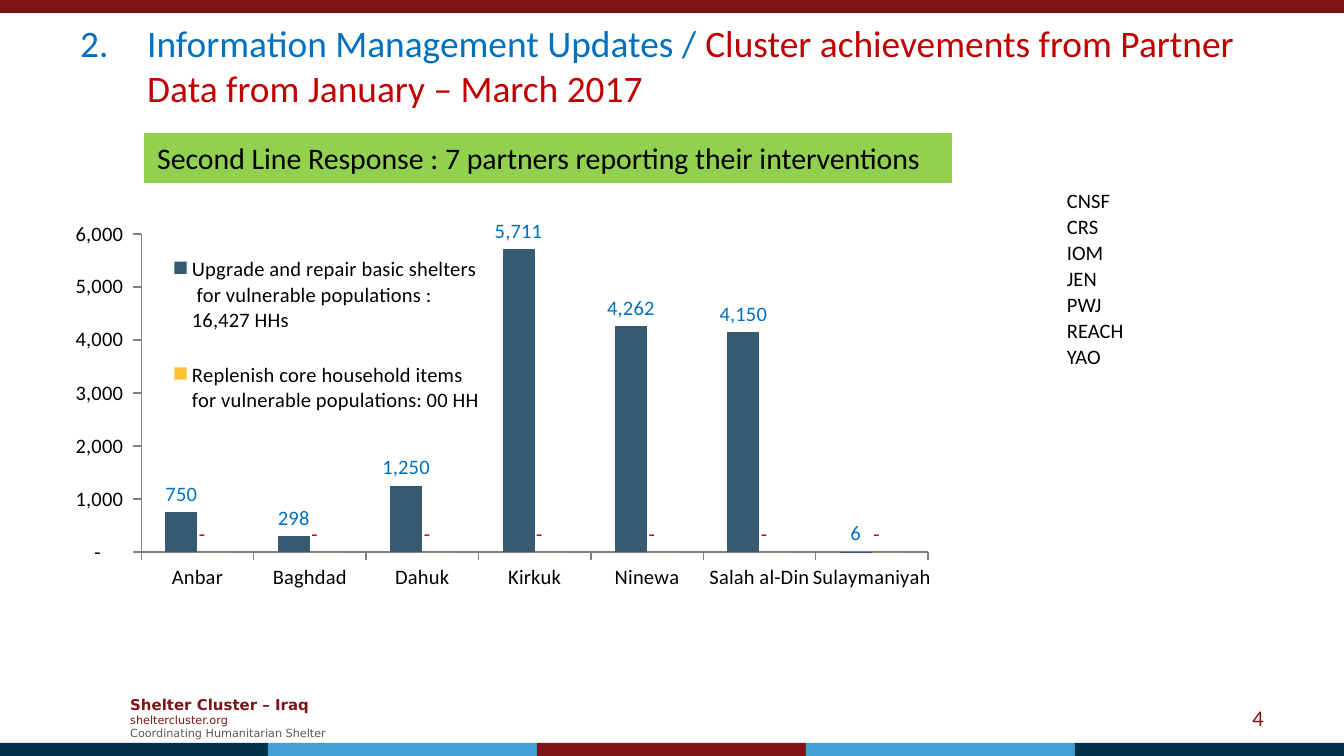
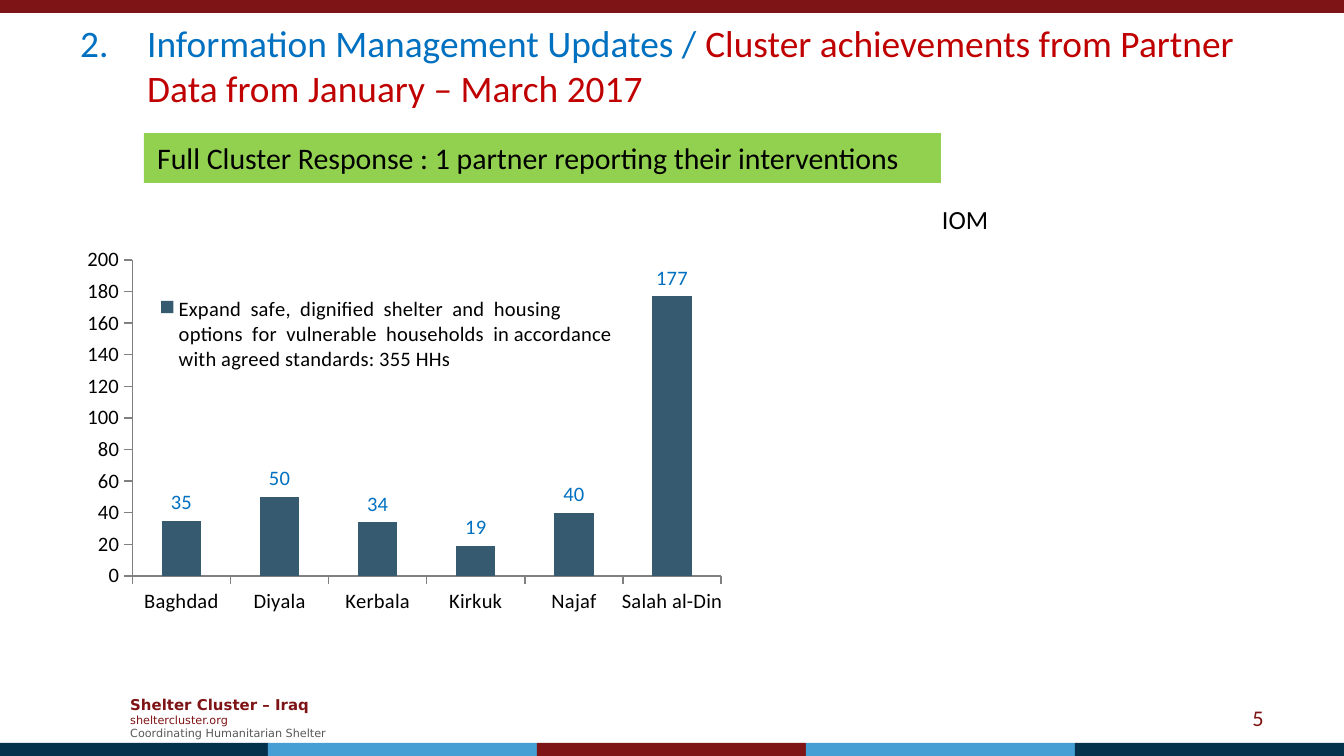
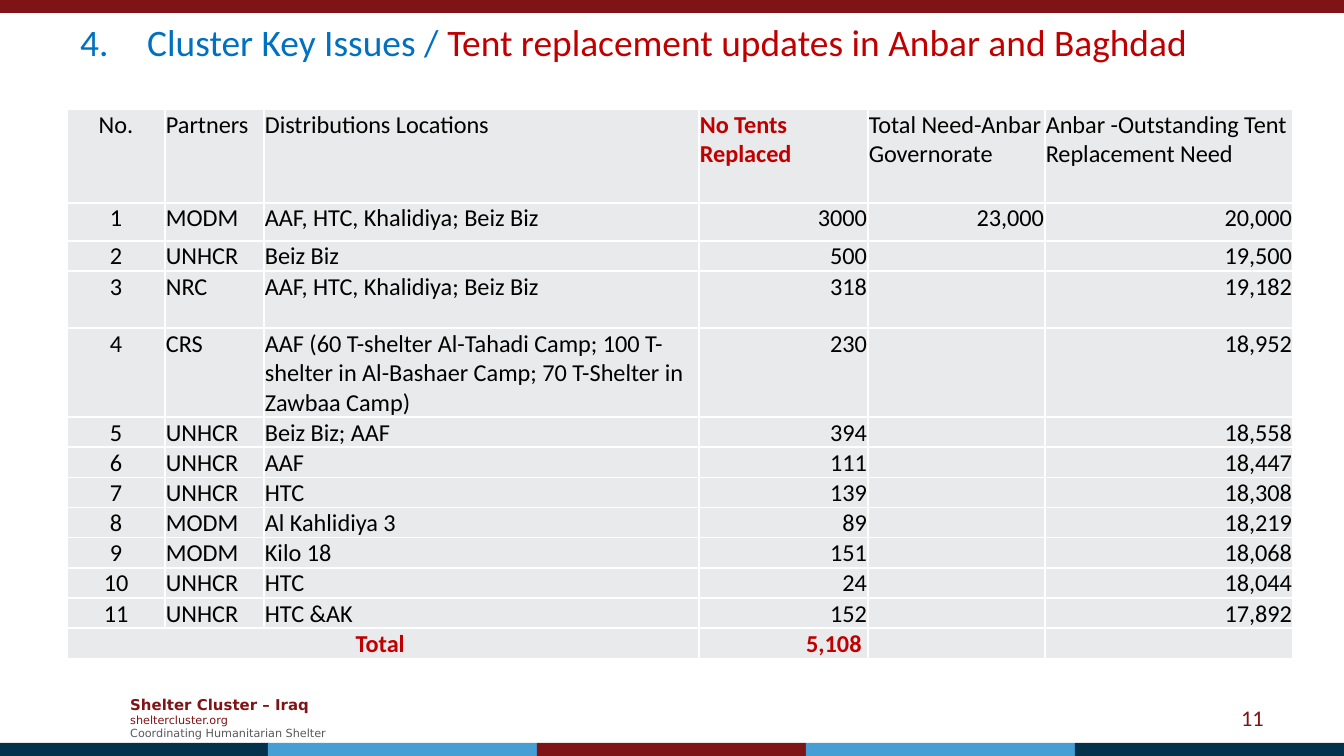
from lxml import etree
from pptx import Presentation
from pptx.chart.data import CategoryChartData
from pptx.dml.color import RGBColor
from pptx.enum.chart import XL_CHART_TYPE, XL_LABEL_POSITION, XL_LEGEND_POSITION, XL_TICK_MARK
from pptx.enum.shapes import MSO_SHAPE
from pptx.enum.text import MSO_ANCHOR, MSO_AUTO_SIZE, PP_ALIGN
from pptx.oxml.ns import qn
from pptx.util import Emu, Pt

SCALE = 914400 / 134.4
WIDTH, HEIGHT = 1344, 756
BAND = 13
FONT, FOOTER_FONT = "Calibri", "DejaVu Sans"
COLORS = {
    "maroon": "7F1416", "navy": "04314C", "sky": "459FD5", "gray": "595959",
    "blue": "0070C0", "red": "C00000", "green": "92D050", "black": "000000",
    "white": "FFFFFF", "cell": "E8EAEB", "slate": "365A70", "amber": "FFC133",
    "axis": "808080",
}
LEFT, CENTER, RIGHT = PP_ALIGN.LEFT, PP_ALIGN.CENTER, PP_ALIGN.RIGHT
TOP, MIDDLE, BOTTOM = MSO_ANCHOR.TOP, MSO_ANCHOR.MIDDLE, MSO_ANCHOR.BOTTOM
RECTANGLE = MSO_SHAPE.RECTANGLE
COLUMNS = XL_CHART_TYPE.COLUMN_CLUSTERED
OUTSIDE_END = XL_LABEL_POSITION.OUTSIDE_END
LEGEND_RIGHT = XL_LEGEND_POSITION.RIGHT
TICK_OUT, TICK_NONE = XL_TICK_MARK.OUTSIDE, XL_TICK_MARK.NONE
FIT_SHAPE = MSO_AUTO_SIZE.SHAPE_TO_FIT_TEXT

ACCOUNTING = '_(* #,##0_);_(* \\(#,##0\\);_(* "-"??_);_('
UPDATES = ("Information Management Updates / ",
           "Cluster achievements from Partner Data from January – March 2017")
PARTNERS = ["CNSF", "CRS", "IOM", "JEN", "PWJ", "REACH", "YAO"]
TENT_WIDTHS = [98, 99, 435, 169, 177, 248]
TENT_HEIGHTS = [94, 38, 30, 57, 89] + [30] * 8
TENT_HEADER = ("No.", "Partners", "Distributions Locations", "No Tents Replaced",
               "Total Need-Anbar Governorate", "Anbar -Outstanding Tent Replacement Need")
TENT_ROWS = [
    ("1", "MODM", "AAF, HTC, Khalidiya; Beiz Biz", "3000", "23,000", "20,000"),
    ("2", "UNHCR", "Beiz Biz", "500", "", "19,500"),
    ("3", "NRC", "AAF, HTC, Khalidiya; Beiz Biz", "318", "", "19,182"),
    ("4", "CRS", "AAF (60 T-shelter Al-Tahadi Camp; 100 T-shelter in Al-Bashaer Camp; "
     "70 T-Shelter in Zawbaa Camp)", "230", "", "18,952"),
    ("5", "UNHCR", "Beiz Biz; AAF", "394", "", "18,558"),
    ("6", "UNHCR", "AAF", "111", "", "18,447"),
    ("7", "UNHCR", "HTC", "139", "", "18,308"),
    ("8", "MODM", "Al Kahlidiya 3", "89", "", "18,219"),
    ("9", "MODM", "Kilo 18", "151", "", "18,068"),
    ("10", "UNHCR", "HTC", "24", "", "18,044"),
    ("11", "UNHCR", "HTC &AK", "152", "", "17,892"),
]
TENT_TOTAL = ("Total ", "", "", "5,108 ", "", "")


def px(length):
    """Turn pixels into EMU."""
    return Emu(round(length * SCALE))


def place(box):
    """Turn a pixel box into EMU lengths."""
    return [px(length) for length in box]


def color(name):
    """Look up a colour by name."""
    return RGBColor.from_string(COLORS[name])


def style(font, size, name, bold=None, face=FONT):
    """Set the look of a font."""
    font.size, font.name, font.bold = Pt(size), face, bold
    font.color.rgb = color(name)


def add_span(para, text, size, name, bold=None, face=FONT):
    """Add one styled run to a paragraph."""
    span = para.add_run()
    span.text = text
    style(span.font, size, name, bold, face)


def add_frame(page, box):
    """Add a wrapping, vertically centred text box and return its frame."""
    frame = page.shapes.add_textbox(*place(box)).text_frame
    frame.word_wrap = True
    frame.vertical_anchor = MIDDLE
    return frame


def add_rectangle(page, box, name):
    """Add a plain filled rectangle."""
    shape = page.shapes.add_shape(RECTANGLE, *place(box))
    shape.shadow.inherit = False
    shape.fill.solid()
    shape.fill.fore_color.rgb = color(name)
    shape.line.fill.background()
    return shape


def add_furniture(page, number):
    """Add the bands, the footer and the page number."""
    frame = add_frame(page, (117, 688, 233, 59))
    lines = [("Shelter Cluster – Iraq", 8, "maroon", True),
             ("sheltercluster.org", 6, "maroon", False),
             ("Coordinating Humanitarian Shelter", 6, "gray", False)]
    for index, line in enumerate(lines):
        para = frame.add_paragraph() if index else frame.paragraphs[0]
        add_span(para, *line, face=FOOTER_FONT)
    add_rectangle(page, (0, 0, WIDTH, BAND), "maroon")
    names = ("navy", "sky", "maroon", "sky", "navy")
    for index, name in enumerate(names):
        left = index * WIDTH // len(names)
        add_rectangle(page, (left, HEIGHT - BAND, WIDTH - 4 * WIDTH // 5, BAND), name)
    para = add_frame(page, (964, 698, 313, 40)).paragraphs[0]
    para.alignment = RIGHT
    add_span(para, str(number), 12, "maroon")


def add_title(page, box, start, topic, detail):
    """Add a numbered title in two colours."""
    para = add_frame(page, box).paragraphs[0]
    props = para._p.get_or_add_pPr()
    props.set("marL", str(px(67)))
    props.set("indent", str(-px(67)))
    etree.SubElement(props, qn("a:buAutoNum"), type="arabicPeriod", startAt=str(start))
    add_span(para, topic, 20, "blue")
    add_span(para, detail, 20, "red")


def add_banner(page, box, text):
    """Add the green heading over a chart."""
    frame = add_rectangle(page, box, "green").text_frame
    frame.word_wrap = False
    frame.auto_size = FIT_SHAPE
    frame.vertical_anchor = TOP
    para = frame.paragraphs[0]
    para.alignment = LEFT
    add_span(para, text, 16, "black")


def make_layout(bounds, inner=False):
    """Build a manual chart layout from fractions."""
    layout = etree.Element(qn("c:layout"))
    manual = etree.SubElement(layout, qn("c:manualLayout"))
    if inner:
        etree.SubElement(manual, qn("c:layoutTarget"), val="inner")
    for key in ("xMode", "yMode"):
        etree.SubElement(manual, qn("c:" + key), val="edge")
    for key, value in zip("xywh", bounds):
        etree.SubElement(manual, qn("c:" + key), val=str(value))
    return layout


def add_columns(page, box, categories, series, plot_bounds, legend_bounds, number_format):
    """Add a column chart with its legend over the plot."""
    data = CategoryChartData(number_format=number_format)
    data.categories = categories
    for name, values, _, _ in series:
        data.add_series(name, values)
    chart = page.shapes.add_chart(COLUMNS, *place(box), data).chart
    chart.has_title = False
    style(chart.font, 11, "black")
    for axis in (chart.category_axis, chart.value_axis):
        axis.has_major_gridlines = False
        axis.major_tick_mark, axis.minor_tick_mark = TICK_OUT, TICK_NONE
        axis.format.line.color.rgb = color("axis")
    labels = chart.value_axis.tick_labels
    labels.number_format, labels.number_format_is_linked = number_format, False
    plot = chart.plots[0]
    plot.gap_width = 150
    plot.vary_by_categories = False
    for columns, (_, _, fill_name, label_name) in zip(plot.series, series):
        columns.invert_if_negative = False
        columns.format.fill.solid()
        columns.format.fill.fore_color.rgb = color(fill_name)
        labels = columns.data_labels
        labels.show_value, labels.position = True, OUTSIDE_END
        labels.number_format, labels.number_format_is_linked = number_format, False
        style(labels.font, 11, label_name)
    chart.has_legend = True
    chart.legend.position = LEGEND_RIGHT
    chart.legend.include_in_layout = True
    style(chart.legend.font, 11, "black")
    legend = chart.legend._element
    area = chart._chartSpace.find(".//" + qn("c:plotArea"))
    for parent in (legend, area):
        for layout in parent.findall(qn("c:layout")):
            parent.remove(layout)
    legend.insert(1, make_layout(legend_bounds))
    area.insert(0, make_layout(plot_bounds, inner=True))


def fill_cell(cell, text, size, fill_name, name="black", bold=None, align=LEFT, anchor=TOP):
    """Style one table cell and write its text."""
    cell.margin_left = cell.margin_right = cell.margin_top = px(1)
    cell.margin_bottom = 0
    cell.vertical_anchor = anchor
    props = cell._tc.get_or_add_tcPr()
    for side in ("lnL", "lnR", "lnT", "lnB"):
        line = etree.SubElement(props, qn("a:" + side), w=str(Pt(1)))
        solid = etree.SubElement(line, qn("a:solidFill"))
        etree.SubElement(solid, qn("a:srgbClr"), val=COLORS["white"])
    cell.fill.solid()
    cell.fill.fore_color.rgb = color(fill_name)
    para = cell.text_frame.paragraphs[0]
    para.alignment = align
    if text:
        add_span(para, text, size, name, bold)
    else:
        para._p.get_or_add_endParaRPr().set("sz", str(size * 100))


def add_grid(page, left, top, widths, heights):
    """Add an unstyled table with the given columns and rows."""
    box = (left, top, sum(widths), sum(heights))
    table = page.shapes.add_table(len(heights), len(widths), *place(box)).table
    table.first_row = table.horz_banding = False
    for column, width in zip(table.columns, widths):
        column.width = px(width)
    for row, height in zip(table.rows, heights):
        row.height = px(height)
    return table


def add_partners(page, left, top, names, size, height, anchor=TOP):
    """Add the one-column list of reporting partners."""
    table = add_grid(page, left, top, [87], [height] * len(names))
    for index, name in enumerate(names):
        fill_cell(table.cell(index, 0), name, size, "white", anchor=anchor)


def add_tents(page, left, top):
    """Add the tent replacement table with its total row."""
    table = add_grid(page, left, top, TENT_WIDTHS, TENT_HEIGHTS)
    rows = [TENT_HEADER, *TENT_ROWS, TENT_TOTAL]
    last = len(rows) - 1
    for row, texts in enumerate(rows):
        for column, text in enumerate(texts):
            strong = row == last or (row == 0 and column == 3)
            if column == 0:
                align = CENTER
            else:
                align = RIGHT if row and column > 2 else LEFT
            fill_cell(table.cell(row, column), text, 13, "cell",
                      "red" if strong else "black", strong, align)
    table.cell(last, 0).merge(table.cell(last, 2))


def build_second_line(page):
    """Build the second line response slide."""
    add_furniture(page, 4)
    add_title(page, (67, 38, 1193, 54), 2, *UPDATES)
    add_banner(page, (144, 133, 808, 50),
               "Second Line Response : 7 partners reporting their interventions")
    series = [
        ("Upgrade and repair basic shelters\n for vulnerable populations :\n16,427 HHs\n",
         (750, 298, 1250, 5711, 4262, 4150, 6), "slate", "blue"),
        ("Replenish core household items\nfor vulnerable populations: 00 HH",
         (0,) * 7, "amber", "red"),
    ]
    add_columns(page, (44, 211, 887, 461),
                ["Anbar", "Baghdad", "Dahuk", "Kirkuk", "Ninewa", "Salah al-Din", "Sulaymaniyah"],
                series, (0.11, 0.05, 0.89, 0.69), (0.14, 0.09, 0.36, 0.36), ACCOUNTING)
    add_partners(page, 1066, 188, PARTNERS, 11, 26)


def build_full_cluster(page):
    """Build the full cluster response slide."""
    add_furniture(page, 5)
    add_title(page, (67, 38, 1193, 54), 2, *UPDATES)
    add_banner(page, (144, 133, 797, 50),
               "Full Cluster Response : 1 partner reporting their interventions")
    series = [
        ("Expand  safe,  dignified  shelter  and  housing  options  for  vulnerable  households  "
         "in accordance with agreed standards: 355 HHs",
         (35, 50, 34, 19, 40, 177), "slate", "blue"),
    ]
    add_columns(page, (67, 238, 727, 439),
                ["Baghdad", "Diyala", "Kerbala", "Kirkuk", "Najaf", "Salah al-Din"],
                series, (0.09, 0.05, 0.81, 0.72), (0.12, 0.12, 0.64, 0.2), "General")
    add_partners(page, 941, 204, ["IOM"], 14, 32, BOTTOM)


def build_key_issues(page):
    """Build the tent replacement slide."""
    add_furniture(page, 11)
    add_tents(page, 67, 109)
    add_title(page, (67, 22, 1193, 39), 4, "Cluster Key Issues / ",
              "Tent replacement updates in Anbar and Baghdad")


def main():
    """Build and save the deck."""
    deck = Presentation()
    deck.slide_width, deck.slide_height = px(WIDTH), px(HEIGHT)
    for build in (build_second_line, build_full_cluster, build_key_issues):
        build(deck.slides.add_slide(deck.slide_layouts[6]))
    deck.save("out.pptx")


if __name__ == "__main__":
    main()
